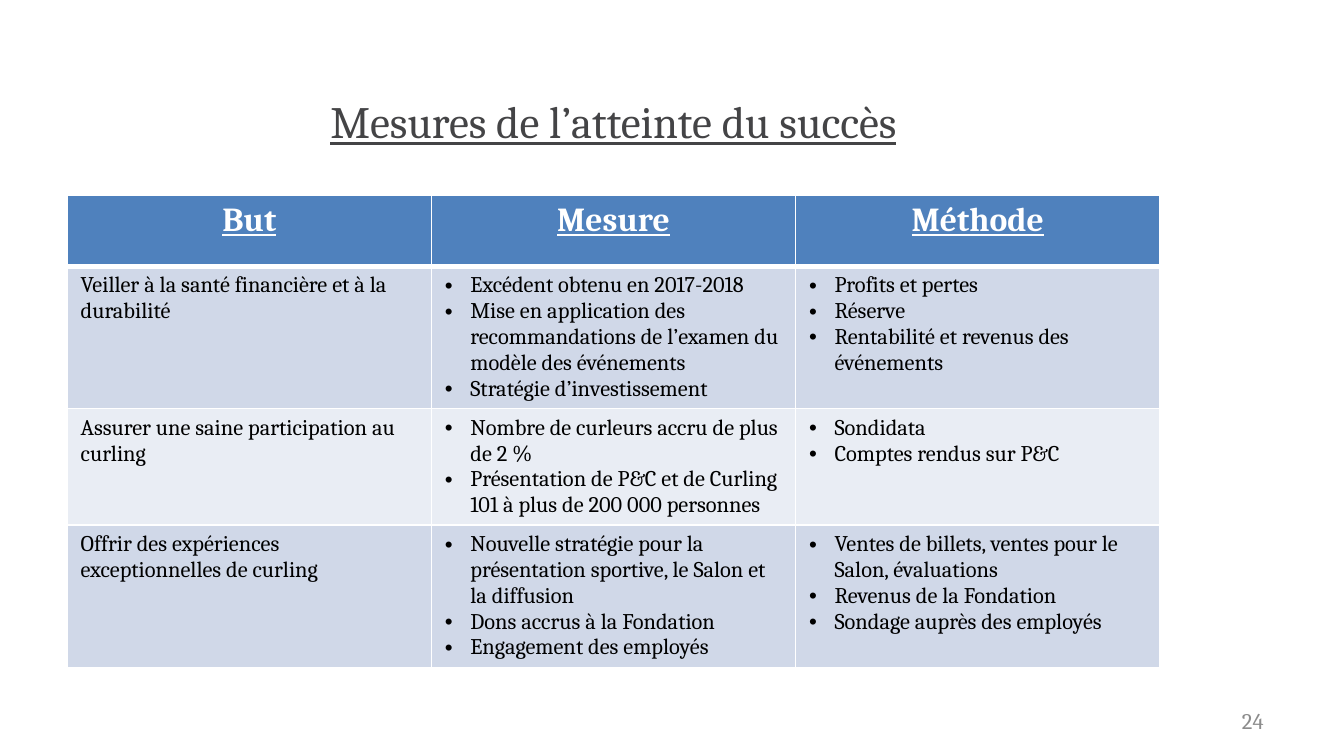
from lxml import etree
from pptx import Presentation
from pptx.dml.color import RGBColor
from pptx.enum.text import MSO_ANCHOR, PP_ALIGN
from pptx.oxml.ns import qn
from pptx.util import Inches, Pt

CENTER, RIGHT = PP_ALIGN.CENTER, PP_ALIGN.RIGHT
MIDDLE = MSO_ANCHOR.MIDDLE
TITLE_ONLY = 5
FONT = "Cambria"
WHITE, BLACK, TITLE_GREY, NUMBER_GREY = "FFFFFF", "000000", "444446", "8C8C8C"
HEADER_FILL = "4F81BD"
BAND_FILLS = ["D0D8E8", "E9EDF4"]
LEFT, WIDTH = 0.5, 8.13
ROW_HEIGHT = 0.53

HEADINGS = ["But", "Mesure", "Méthode"]
GOALS = [
    ("Veiller à la santé financière et à la durabilité",
     ["Excédent obtenu en 2017-2018",
      "Mise en application des recommandations de l’examen du modèle des événements",
      "Stratégie d’investissement"],
     ["Profits et pertes", "Réserve", "Rentabilité et revenus des événements"]),
    ("Assurer une saine participation au curling",
     ["Nombre de curleurs accru de plus de 2 %",
      "Présentation de P&C et de Curling 101 à plus de 200 000 personnes"],
     ["Sondidata", "Comptes rendus sur P&C"]),
    ("Offrir des expériences exceptionnelles de curling",
     ["Nouvelle stratégie pour la présentation sportive, le Salon et la diffusion",
      "Dons accrus à la Fondation",
      "Engagement des employés"],
     ["Ventes de billets, ventes pour le Salon, évaluations",
      "Revenus de la Fondation",
      "Sondage auprès des employés"]),
]


def color(value):
    return RGBColor.from_string(value)


def style(para, size, text_color, align=None, bold=False, underline=False):
    para.alignment = align
    font = para.font
    font.name, font.size = FONT, Pt(size)
    font.bold, font.underline = bold, underline
    font.color.rgb = color(text_color)


def add_bullet(para):
    properties = para._p.get_or_add_pPr()
    indent = Inches(0.19)
    properties.set("marL", str(indent))
    properties.set("indent", str(-indent))
    etree.SubElement(properties, qn("a:buFont")).set("typeface", "Arial")
    etree.SubElement(properties, qn("a:buChar")).set("char", "•")


def format_cell(cell, fill, bottom_width=1):
    """Give the cell white borders and a plain fill."""
    properties = cell._tc.get_or_add_tcPr()
    for side, width in [("L", 1), ("R", 1), ("T", 1), ("B", bottom_width)]:
        line = etree.SubElement(properties, qn("a:ln" + side), w=str(Pt(width)))
        solid = etree.SubElement(line, qn("a:solidFill"))
        etree.SubElement(solid, qn("a:srgbClr"), val=WHITE)
    cell.fill.solid()
    cell.fill.fore_color.rgb = color(fill)


def fill_body_cell(cell, content):
    """Write a string as plain text, or a list as bullets."""
    bulleted = isinstance(content, list)
    lines = content if bulleted else [content]
    cell.text = "\n".join(lines)
    for para in cell.text_frame.paragraphs:
        if bulleted:
            add_bullet(para)
        style(para, 12, BLACK)


def add_title(page, text):
    title = page.shapes.title
    title.left, title.top = Inches(LEFT), Inches(0.43)
    title.width, title.height = Inches(WIDTH), Inches(0.94)
    title.text_frame.text = text
    title.text_frame.vertical_anchor = MIDDLE
    style(title.text_frame.paragraphs[0], 24, TITLE_GREY, CENTER, underline=True)


def add_goal_table(page):
    row_count = len(GOALS) + 1
    table = page.shapes.add_table(
        row_count, len(HEADINGS), Inches(LEFT), Inches(1.45),
        Inches(WIDTH), Inches(ROW_HEIGHT * row_count)).table
    for cell, heading in zip(table.rows[0].cells, HEADINGS):
        cell.text = heading
        format_cell(cell, HEADER_FILL, bottom_width=3)
        style(cell.text_frame.paragraphs[0], 18, WHITE, CENTER, bold=True, underline=True)
    for index, goal in enumerate(GOALS):
        for cell, content in zip(table.rows[index + 1].cells, goal):
            format_cell(cell, BAND_FILLS[index % 2])
            fill_body_cell(cell, content)


def add_page_number(page, text):
    box = page.shapes.add_textbox(Inches(7.17), Inches(5.21), Inches(2.33), Inches(0.3))
    frame = box.text_frame
    frame.word_wrap = True
    frame.vertical_anchor = MIDDLE
    frame.text = text
    style(frame.paragraphs[0], 12, NUMBER_GREY, RIGHT)


def main():
    deck = Presentation()
    deck.slide_width = Inches(10)
    deck.slide_height = deck.slide_width * 9 // 16
    page = deck.slides.add_slide(deck.slide_layouts[TITLE_ONLY])
    add_title(page, "Mesures de l’atteinte du succès")
    add_goal_table(page)
    add_page_number(page, "24")
    deck.save("out.pptx")


if __name__ == "__main__":
    main()
